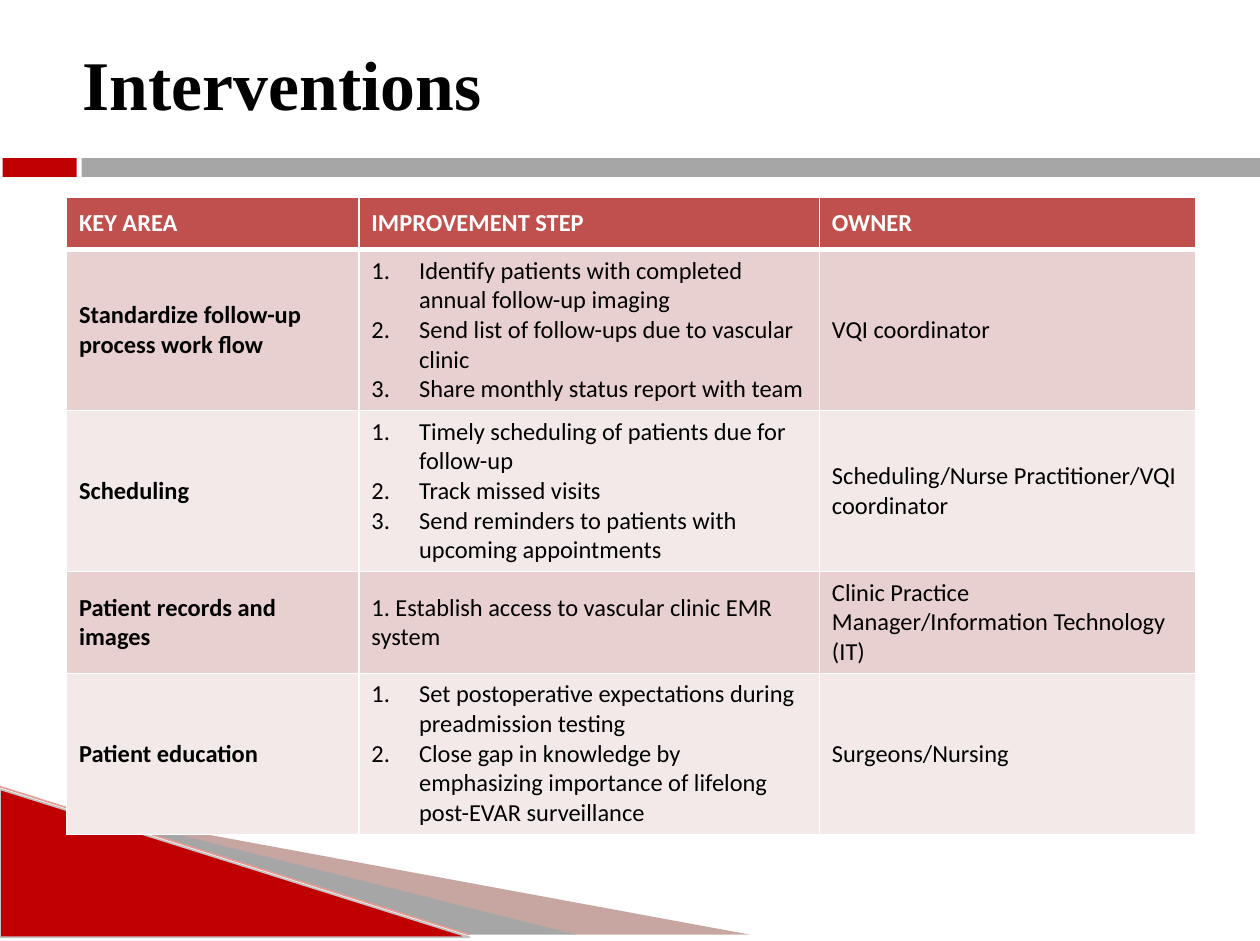
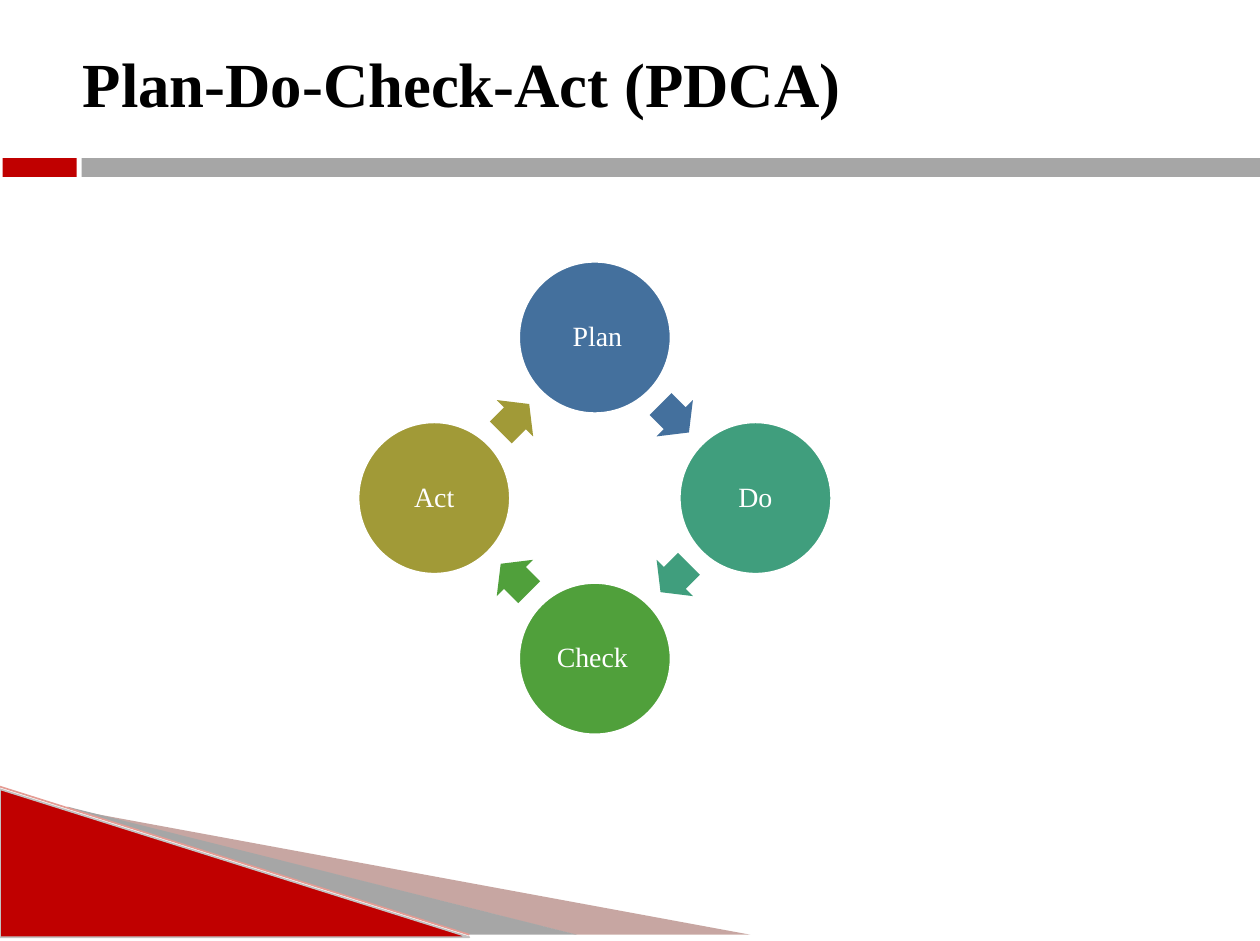
from dataclasses import dataclass
from math import cos, radians, sin

from lxml.etree import SubElement
from pptx import Presentation
from pptx.dml.color import RGBColor
from pptx.enum.shapes import MSO_CONNECTOR as Connector
from pptx.enum.shapes import MSO_SHAPE as Preset
from pptx.enum.text import MSO_ANCHOR as Anchor
from pptx.enum.text import MSO_AUTO_SIZE as AutoSize
from pptx.enum.text import PP_ALIGN as Align
from pptx.oxml.ns import qn
from pptx.shapes.autoshape import Shape
from pptx.slide import Slide
from pptx.table import _Cell as Cell
from pptx.util import Inches, Pt

WHITE, BLACK, RED, GREY = "FFFFFF", "000000", "C00000", "A6A6A6"
HEADER_FILL, ROW_FILLS = "C0504D", ("E8D0D0", "F4E9E9")
SERIF, SANS = "Times New Roman", "Calibri"


@dataclass(frozen=True)
class Wedge:
    points: tuple[tuple[float, float], ...]
    fill: str
    opacity: int = 100


@dataclass(frozen=True)
class Block:
    preset: Preset
    left: float
    top: float
    width: float
    height: float
    fill: str
    outline: str | None = None
    outline_width: float = 1


@dataclass(frozen=True)
class Intervention:
    area: str
    steps: tuple[str, ...]
    owner: str
    height: float


@dataclass(frozen=True)
class Stage:
    label: str
    fill: str
    shift: float = 0


WEDGES = (
    Wedge(((0.56, 6.45), (5.98, 7.45), (4.59, 7.45), (0.56, 6.44)), "742217", 40),
    Wedge(((0.54, 6.43), (4.6, 7.45), (3.74, 7.45), (0.55, 6.44)), GREY),
)
CORNER = Block(Preset.RIGHT_TRIANGLE, 0, 6.29, 3.74, 1.18, RED, "C3C1C1")
BANDS = (
    Block(Preset.RECTANGLE, 0, 1.25, 10.04, 0.17, WHITE),
    Block(Preset.RECTANGLE, 0.02, 1.26, 0.59, 0.15, RED),
    Block(Preset.RECTANGLE, 0.65, 1.26, 9.39, 0.15, GREY),
)
HEADINGS = ("KEY AREA", "IMPROVEMENT STEP", "OWNER")
COLUMN_WIDTHS = (2.33, 3.67, 3)
HEADER_HEIGHT = 0.42
INTERVENTIONS = (
    Intervention(
        "Standardize follow-up process work flow",
        (
            "Identify patients with completed annual follow-up imaging",
            "Send list of follow-ups due to vascular clinic",
            "Share monthly status report with team",
        ),
        "VQI coordinator",
        1.27,
    ),
    Intervention(
        "Scheduling",
        (
            "Timely scheduling of patients due for follow-up",
            "Track missed visits",
            "Send reminders to patients with upcoming appointments",
        ),
        "Scheduling/Nurse Practitioner/VQI coordinator",
        1.27,
    ),
    Intervention(
        "Patient records and images",
        ("1. Establish access to vascular clinic EMR system",),
        "Clinic Practice Manager/Information Technology (IT)",
        0.79,
    ),
    Intervention(
        "Patient education",
        (
            "Set postoperative expectations during preadmission testing",
            "Close gap in knowledge by emphasizing importance of lifelong post-EVAR surveillance",
        ),
        "Surgeons/Nursing",
        1.27,
    ),
)
STAGES = (
    Stage("Plan", "44709D", 0.02),
    Stage("Do", "409E7D"),
    Stage("Check", "50A03B", -0.02),
    Stage("Act", "A19A37"),
)
CYCLE_X, CYCLE_Y = 4.74, 3.97
CYCLE_RADIUS, ARROW_RADIUS = 1.28, 0.9
CIRCLE_SIZE, ARROW_LENGTH, ARROW_HEIGHT = 1.21, 0.32, 0.41


def color(value: str) -> RGBColor:
    return RGBColor.from_string(value)


def paint(shape: Shape, fill: str, outline: str | None = None, width: float = 1) -> None:
    shape.shadow.inherit = False
    shape.fill.solid()
    shape.fill.fore_color.rgb = color(fill)
    if outline:
        shape.line.color.rgb = color(outline)
        shape.line.width = Pt(width)
    else:
        shape.line.fill.background()


def add_block(page: Slide, block: Block) -> Shape:
    shape = page.shapes.add_shape(
        block.preset, Inches(block.left), Inches(block.top), Inches(block.width), Inches(block.height)
    )
    paint(shape, block.fill, block.outline, block.outline_width)
    return shape


def add_wedge(page: Slide, wedge: Wedge) -> None:
    start, *others = [(Inches(x), Inches(y)) for x, y in wedge.points]
    builder = page.shapes.build_freeform(*start)
    builder.add_line_segments(others, close=True)
    shape = builder.convert_to_shape()
    paint(shape, wedge.fill)
    if wedge.opacity < 100:
        fill_color = shape._element.spPr.find(qn("a:solidFill")).find(qn("a:srgbClr"))
        SubElement(fill_color, qn("a:alpha"), val=str(wedge.opacity * 1000))


def add_page(deck: Presentation, title: str, size: float) -> Slide:
    page = deck.slides.add_slide(deck.slide_layouts[5])
    for wedge in WEDGES:
        add_wedge(page, wedge)
    add_block(page, CORNER)
    edge = page.shapes.add_connector(
        Connector.STRAIGHT, Inches(0), Inches(6.27), Inches(3.74), Inches(7.45)
    )
    edge.line.color.rgb = color("E59C94")
    edge.line.width = Pt(0.95)
    SubElement(edge._element.spPr, qn("a:effectLst"))
    for band in BANDS:
        add_block(page, band)

    box = page.shapes.title
    box.left, box.top, box.width, box.height = Inches(0.36), Inches(0.21), Inches(7), Inches(0.89)
    frame = box.text_frame
    frame.text = title
    frame.word_wrap = True
    frame.auto_size = AutoSize.NONE
    frame.vertical_anchor = Anchor.MIDDLE
    para = frame.paragraphs[0]
    para.alignment = Align.LEFT
    para._p.get_or_add_pPr().set("marL", str(Inches(0.2)))
    para.font.name = SERIF
    para.font.size = Pt(size)
    para.font.bold = True
    para.font.color.rgb = color(BLACK)
    return page


def add_borders(cell: Cell, bottom_width: float) -> None:
    properties = cell._tc.get_or_add_tcPr()
    for side, width in (("lnL", 1), ("lnR", 1), ("lnT", 1), ("lnB", bottom_width)):
        line = SubElement(properties, qn(f"a:{side}"), w=str(Pt(width)))
        SubElement(SubElement(line, qn("a:solidFill")), qn("a:srgbClr"), val=WHITE)


def fill_cell(
    cell: Cell, lines: tuple[str, ...], fill: str, font_color: str, bold: bool, bottom_width: float = 1
) -> None:
    add_borders(cell, bottom_width)
    cell.fill.solid()
    cell.fill.fore_color.rgb = color(fill)
    cell.vertical_anchor = Anchor.MIDDLE
    cell.text = "\n".join(lines)
    for para in cell.text_frame.paragraphs:
        if len(lines) > 1:
            properties = para._p.get_or_add_pPr()
            properties.set("marL", str(Inches(0.38)))
            properties.set("indent", str(Inches(-0.38)))
            SubElement(properties, qn("a:buAutoNum"), type="arabicPeriod")
        para.font.name = SANS
        para.font.size = Pt(14)
        para.font.bold = bold
        para.font.color.rgb = color(font_color)


def add_interventions(page: Slide) -> None:
    heights = [HEADER_HEIGHT] + [item.height for item in INTERVENTIONS]
    table = page.shapes.add_table(
        len(heights), len(HEADINGS), Inches(0.53), Inches(1.57),
        Inches(sum(COLUMN_WIDTHS)), Inches(sum(heights)),
    ).table
    for column, width in zip(table.columns, COLUMN_WIDTHS):
        column.width = Inches(width)
    for row, height in zip(table.rows, heights):
        row.height = Inches(height)
    for index, heading in enumerate(HEADINGS):
        fill_cell(table.cell(0, index), (heading,), HEADER_FILL, WHITE, True, 3)
    for row_index, item in enumerate(INTERVENTIONS, start=1):
        fill = ROW_FILLS[(row_index - 1) % 2]
        for index, lines in enumerate(((item.area,), item.steps, (item.owner,))):
            fill_cell(table.cell(row_index, index), lines, fill, BLACK, index == 0)


def cycle_block(
    preset: Preset, angle: float, radius: float, width: float, height: float,
    fill: str, outline: str | None = None,
) -> Block:
    left = CYCLE_X + radius * cos(radians(angle)) - width / 2
    top = CYCLE_Y + radius * sin(radians(angle)) - height / 2
    return Block(preset, left, top, width, height, fill, outline, 1.25)


def add_stage(page: Slide, stage: Stage, angle: float) -> None:
    circle = add_block(
        page, cycle_block(Preset.OVAL, angle, CYCLE_RADIUS, CIRCLE_SIZE, CIRCLE_SIZE, stage.fill, WHITE)
    )
    frame = circle.text_frame
    frame.text = stage.label
    frame.word_wrap = True
    frame.vertical_anchor = Anchor.MIDDLE
    frame.margin_top = frame.margin_bottom = Inches(0.02)
    frame.margin_left = Inches(0.02 + stage.shift)
    frame.margin_right = Inches(0.02 - stage.shift)
    para = frame.paragraphs[0]
    para.alignment = Align.CENTER
    para.line_spacing = 0.9
    para.font.name = SERIF
    para.font.size = Pt(16)
    para.font.color.rgb = color(WHITE)

    arrow = add_block(
        page,
        cycle_block(Preset.RIGHT_ARROW, angle + 45, ARROW_RADIUS, ARROW_LENGTH, ARROW_HEIGHT, stage.fill),
    )
    arrow.adjustments[0] = 0.6
    arrow.adjustments[1] = 0.5
    arrow.rotation = angle + 135


def main() -> None:
    deck = Presentation()
    deck.slide_width, deck.slide_height = Inches(10.04), Inches(7.5)
    add_interventions(add_page(deck, "Interventions", 40))
    cycle_page = add_page(deck, "Plan-Do-Check-Act (PDCA)", 36)
    for index, stage in enumerate(STAGES):
        add_stage(cycle_page, stage, 360 / len(STAGES) * index - 90)
    deck.save("out.pptx")


if __name__ == "__main__":
    main()
